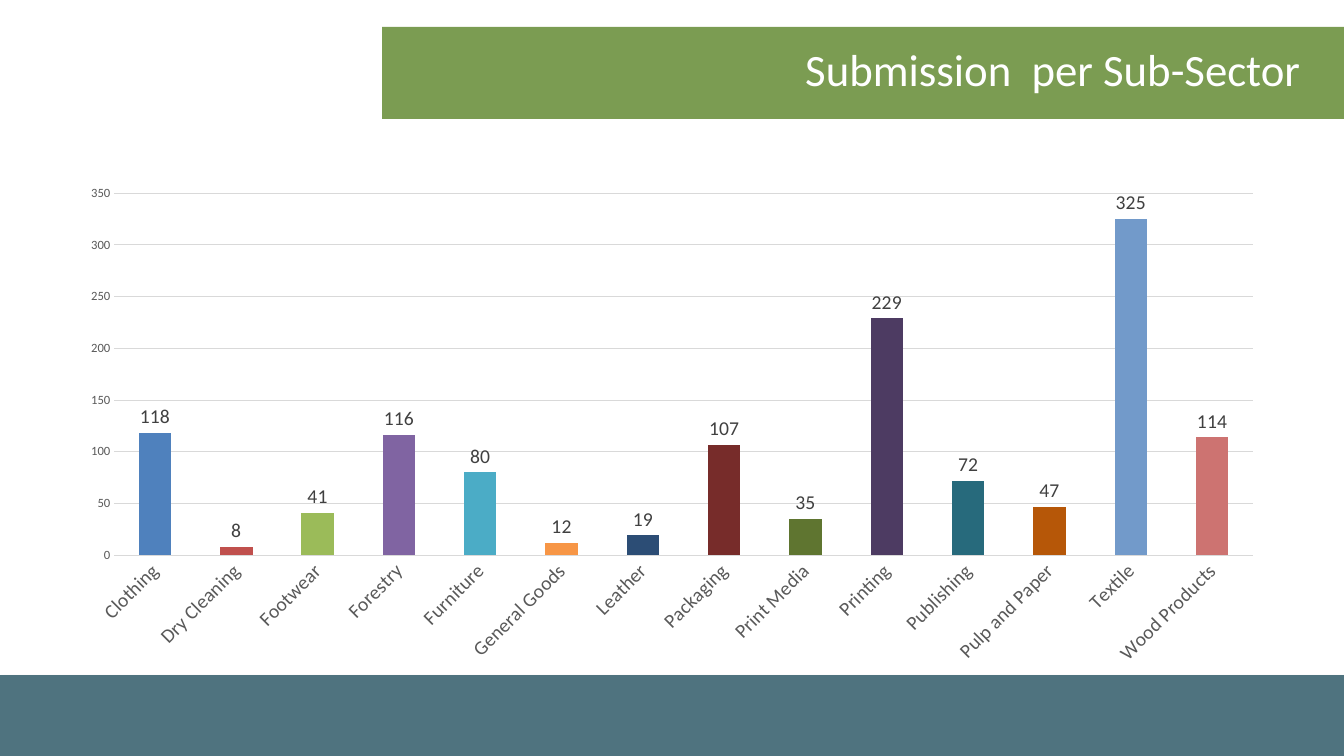
from lxml import etree
from pptx import Presentation
from pptx.chart.data import CategoryChartData
from pptx.dml.color import RGBColor
from pptx.enum.chart import XL_CHART_TYPE, XL_LABEL_POSITION, XL_TICK_MARK
from pptx.enum.shapes import MSO_SHAPE
from pptx.enum.text import MSO_ANCHOR, MSO_AUTO_SIZE, PP_ALIGN
from pptx.oxml.ns import qn
from pptx.util import Emu, Pt

# Content
TITLE = "Submission  per Sub-Sector"
SUBMISSIONS = [  # sub-sector, submissions, bar colour
    ("Clothing", 118, RGBColor(0x4F, 0x81, 0xBD)),
    ("Dry Cleaning", 8, RGBColor(0xC0, 0x50, 0x4D)),
    ("Footwear", 41, RGBColor(0x9B, 0xBB, 0x59)),
    ("Forestry", 116, RGBColor(0x80, 0x64, 0xA2)),
    ("Furniture", 80, RGBColor(0x4B, 0xAC, 0xC6)),
    ("General Goods", 12, RGBColor(0xF7, 0x96, 0x46)),
    ("Leather", 19, RGBColor(0x2C, 0x4D, 0x75)),
    ("Packaging", 107, RGBColor(0x77, 0x2C, 0x2A)),
    ("Print Media", 35, RGBColor(0x5F, 0x75, 0x30)),
    ("Printing", 229, RGBColor(0x4D, 0x3B, 0x62)),
    ("Publishing", 72, RGBColor(0x27, 0x6A, 0x7C)),
    ("Pulp and Paper", 47, RGBColor(0xB6, 0x57, 0x08)),
    ("Textile", 325, RGBColor(0x72, 0x9A, 0xCA)),
    ("Wood Products", 114, RGBColor(0xCD, 0x73, 0x71)),
]

# Boxes in px: left, top, width, height
SLIDE_SIZE = (1344, 756)
FOOTER_BOX = (0, 675, 1344, 81)
BANNER_BOX = (382, 27, 964, 92)
TITLE_BOX = (101, 6, 1210, 126)
CHART_BOX = (67, 176, 1210, 499)

FONT = "Calibri"
WHITE = RGBColor(0xFF, 0xFF, 0xFF)
BLACK = RGBColor(0x00, 0x00, 0x00)
TEAL = RGBColor(0x4F, 0x73, 0x7F)
GREEN = RGBColor(0x7B, 0x9C, 0x52)
AXIS_GREY = RGBColor(0x59, 0x59, 0x59)
LABEL_GREY = RGBColor(0x40, 0x40, 0x40)
GRID_GREY = RGBColor(0xD9, 0xD9, 0xD9)


def px(*lengths):
    return [Emu(round(length * 914400 / 100.8)) for length in lengths]


def set_font(font, size, color):
    font.name, font.size, font.bold = FONT, Pt(size), False
    font.color.rgb = color


def add_band(slide, box, color):
    band = slide.shapes.add_shape(MSO_SHAPE.RECTANGLE, *px(*box))
    band.shadow.inherit = False
    band.fill.solid()
    band.fill.fore_color.rgb = color
    band.line.fill.background()
    return band


def add_shadow(shape):
    effects = shape.element.spPr.find(qn("a:effectLst"))
    shadow = etree.SubElement(effects, qn("a:outerShdw"), blurRad=str(Pt(3.1)),
                              dist=str(Pt(1.8)), dir="5400000", rotWithShape="0")
    color = etree.SubElement(shadow, qn("a:srgbClr"), val=str(BLACK))
    etree.SubElement(color, qn("a:alpha"), val="35000")


def add_title(slide):
    title = slide.shapes.title
    title.left, title.top, title.width, title.height = px(*TITLE_BOX)
    frame = title.text_frame
    frame.text = TITLE
    frame.word_wrap = True
    frame.auto_size = MSO_AUTO_SIZE.NONE
    frame.vertical_anchor = MSO_ANCHOR.MIDDLE
    paragraph = frame.paragraphs[0]
    paragraph.alignment = PP_ALIGN.RIGHT
    set_font(paragraph.font, 32, WHITE)
    # Bring the title in front of its banner
    title.element.getparent().append(title.element)


def add_submission_chart(slide):
    names, values, colors = zip(*SUBMISSIONS)
    data = CategoryChartData()
    data.categories = names
    data.add_series("Series 1", values)
    chart = slide.shapes.add_chart(
        XL_CHART_TYPE.COLUMN_CLUSTERED, *px(*CHART_BOX), data).chart
    chart.has_title = chart.has_legend = False
    set_font(chart.font, 10, BLACK)

    # Axes
    for axis, size in ((chart.category_axis, 14), (chart.value_axis, 9)):
        axis.major_tick_mark = axis.minor_tick_mark = XL_TICK_MARK.NONE
        axis.format.line.fill.background()
        set_font(axis.tick_labels.font, size, AXIS_GREY)
    chart.category_axis.tick_labels.font
    label_body = chart.category_axis._element.find(
        f"{qn('c:txPr')}/{qn('a:bodyPr')}")
    label_body.set("rot", str(-45 * 60000))
    label_body.set("vert", "horz")
    value_axis = chart.value_axis
    value_axis.minimum_scale, value_axis.maximum_scale = 0, 350
    value_axis.major_unit = 50
    grid = value_axis.major_gridlines.format.line
    grid.width = Pt(0.75)
    grid.color.rgb = GRID_GREY

    # Bars and their values
    plot = chart.plots[0]
    plot.gap_width = 150
    plot.vary_by_categories = True
    for index, color in enumerate(colors):
        fill = plot.series[0].points[index].format.fill
        fill.solid()
        fill.fore_color.rgb = color
    labels = plot.series[0].data_labels
    labels.show_value = True
    labels.position = XL_LABEL_POSITION.OUTSIDE_END
    set_font(labels.font, 14, LABEL_GREY)


def main():
    presentation = Presentation()
    presentation.slide_width, presentation.slide_height = px(*SLIDE_SIZE)
    slide = presentation.slides.add_slide(presentation.slide_layouts[5])
    add_shadow(add_band(slide, FOOTER_BOX, TEAL))
    add_band(slide, BANNER_BOX, GREEN)
    add_title(slide)
    add_submission_chart(slide)
    presentation.save("out.pptx")


if __name__ == "__main__":
    main()
